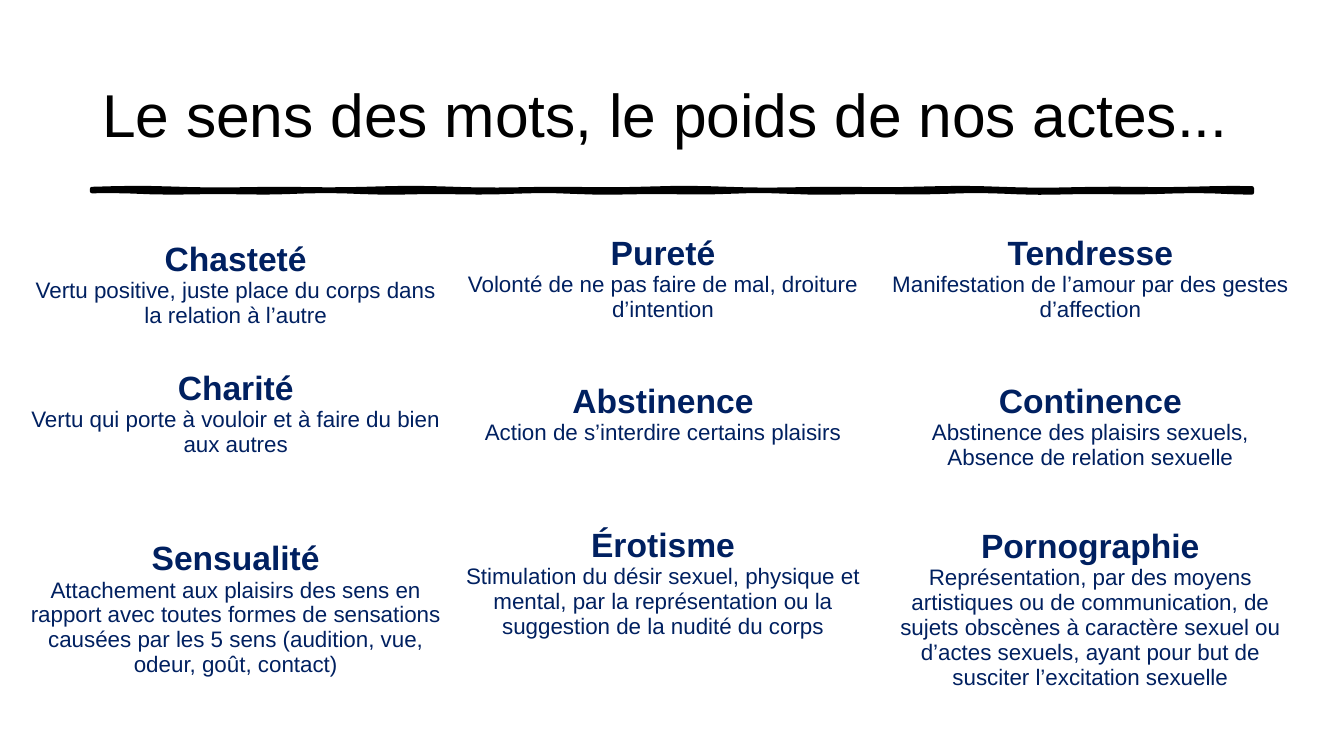
import math

from lxml import etree
from pptx import Presentation
from pptx.dml.color import RGBColor
from pptx.enum.text import MSO_ANCHOR, MSO_AUTO_SIZE, PP_ALIGN
from pptx.oxml.ns import qn
from pptx.util import Emu, Pt

EMU_PER_PX = 914400 / 100.8
LEFT, CENTER = PP_ALIGN.LEFT, PP_ALIGN.CENTER
MIDDLE = MSO_ANCHOR.MIDDLE
NO_AUTOFIT = MSO_AUTO_SIZE.NONE
TITLE_ONLY = 5
BLACK, NAVY, WHITE = "000000", "002060", "FFFFFF"

ROW_HEIGHTS = [149, 148, 216]
# Each entry: word, lines of its definition, space above and below in px
DEFINITIONS = [
    [
        ("Chasteté", ["Vertu positive, juste place du corps dans la relation à l’autre"], 35, 23),
        ("Pureté", ["Volonté de ne pas faire de mal, droiture d’intention"], 0, 0),
        ("Tendresse", ["Manifestation de l’amour par des gestes d’affection"], 0, 0),
    ],
    [
        ("Charité", ["Vertu qui porte à vouloir et à faire du bien aux autres"], 0, 26),
        ("Abstinence", ["Action de s’interdire certains plaisirs"], 0, 26),
        ("Continence", ["Abstinence des plaisirs sexuels,", "Absence de relation sexuelle"], 0, 0),
    ],
    [
        ("Sensualité", ["Attachement aux plaisirs des sens en rapport avec toutes formes de "
                        "sensations causées par les 5 sens (audition, vue, odeur, goût, contact)"], 0, 0),
        ("Érotisme", ["Stimulation du désir sexuel, physique et mental, par la représentation "
                      "ou la suggestion de la nudité du corps"], 0, 52),
        ("Pornographie", ["Représentation, par des moyens artistiques ou de communication, de "
                          "sujets obscènes à caractère sexuel ou d’actes sexuels, ayant pour "
                          "but de susciter l’excitation sexuelle"], 0, 0),
    ],
]


def px(length):
    return Emu(round(length * EMU_PER_PX))


def color(hex_string):
    return RGBColor.from_string(hex_string)


def write(paragraph, text, size, fill=NAVY, bold=False, align=CENTER):
    paragraph.alignment = align
    run = paragraph.add_run()
    run.text = text
    run.font.name = "Arial"
    run.font.size = Pt(size)
    run.font.bold = bold
    run.font.color.rgb = color(fill)


def add_title(slide, left, top, width, height):
    title = slide.shapes.title
    title.left, title.top, title.width, title.height = map(px, (left, top, width, height))
    frame = title.text_frame
    frame.auto_size = NO_AUTOFIT
    frame.vertical_anchor = MIDDLE
    write(frame.paragraphs[0], "Le sens des mots, le poids de nos actes...", 43.2,
          fill=BLACK, align=LEFT)


def add_brush_stroke(slide, left, top, width, height):
    """Draw a hand-painted rule whose two edges waver independently."""
    steps = 60
    xs = [left + width * step / steps for step in range(steps + 1)]
    upper = [(x, top + math.sin(x / 29) * math.sin(x / 90)) for x in xs]
    lower = [(x, top + height + math.sin(x / 23) * math.sin(x / 70)) for x in xs]
    outline = [(px(x), px(y)) for x, y in upper + lower[::-1]]
    builder = slide.shapes.build_freeform(*outline[0])
    builder.add_line_segments(outline[1:], close=True)
    stroke = builder.convert_to_shape()
    stroke.shadow.inherit = False
    stroke.fill.solid()
    stroke.fill.fore_color.rgb = color(BLACK)
    stroke.line.color.rgb = color(BLACK)
    stroke.line.width = Pt(3)
    etree.SubElement(stroke.line._get_or_add_ln(), qn("a:round"))


def fill_definition(cell, word, lines, space_above, space_below):
    cell.fill.solid()
    cell.fill.fore_color.rgb = color(WHITE)
    cell.vertical_anchor = MIDDLE
    cell.margin_left = cell.margin_right = px(7)
    cell.margin_top, cell.margin_bottom = px(space_above), px(space_below)
    frame = cell.text_frame
    write(frame.paragraphs[0], word, 24, bold=True)
    for line in lines:
        write(frame.add_paragraph(), line, 16)


def add_definitions(slide, left, top, width):
    row_count, column_count = len(DEFINITIONS), len(DEFINITIONS[0])
    table = slide.shapes.add_table(row_count, column_count, px(left), px(top),
                                   px(width), px(sum(ROW_HEIGHTS))).table
    table.first_row = table.horz_banding = False
    for row_index, definitions in enumerate(DEFINITIONS):
        table.rows[row_index].height = px(ROW_HEIGHTS[row_index])
        for column_index, definition in enumerate(definitions):
            fill_definition(table.cell(row_index, column_index), *definition)


def main():
    presentation = Presentation()
    presentation.slide_width, presentation.slide_height = px(1344), px(756)
    slide = presentation.slides.add_slide(presentation.slide_layouts[TITLE_ONLY])
    add_brush_stroke(slide, 92, 189, 1160, 3)
    add_title(slide, 92, 40, 1186, 146)
    add_definitions(slide, 22, 204, 1282)
    presentation.save("out.pptx")


if __name__ == "__main__":
    main()
